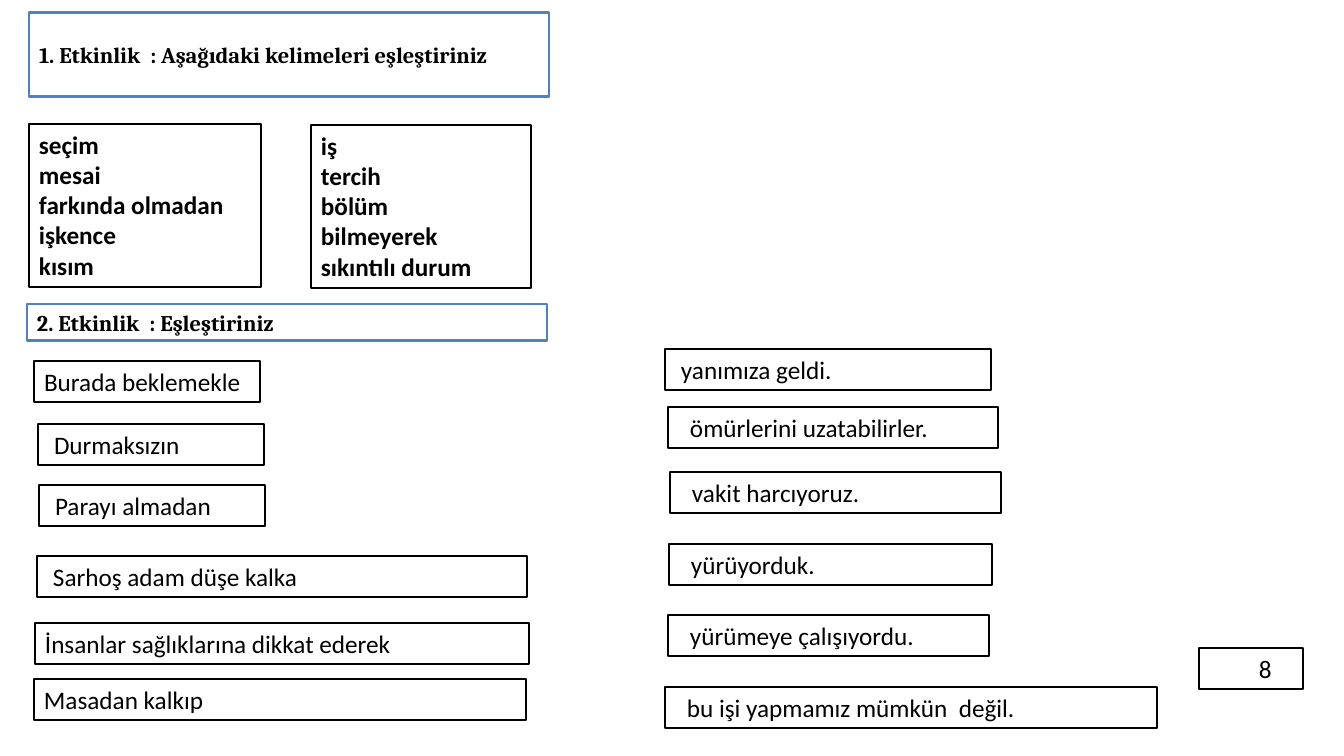
from pptx import Presentation
from pptx.dml.color import RGBColor
from pptx.enum.shapes import MSO_SHAPE
from pptx.enum.text import MSO_ANCHOR, MSO_AUTO_SIZE, PP_ALIGN
from pptx.util import Pt

RECT = MSO_SHAPE.RECTANGLE
TOP, MIDDLE = MSO_ANCHOR.TOP, MSO_ANCHOR.MIDDLE
LEFT = PP_ALIGN.LEFT
GROW = MSO_AUTO_SIZE.SHAPE_TO_FIT_TEXT
PX = 914400 / 100.8
INSET, SPACE, ROW_H = 10, 6, 41
BLACK, WHITE, BLUE = "000000", "FFFFFF", "4F81BD"


def color(value):
    return RGBColor.from_string(value)


def text_box(box, lines, indent=0, bold=False, heading=False, sp=None):
    x, y, w, h = (round(v * PX) for v in box)
    if sp is None:
        sp = s.shapes.add_shape(RECT, x, y, w, h)
        sp.shadow.inherit = False
    sp.left, sp.top, sp.width, sp.height = x, y, w, h
    sp.fill.solid()
    sp.fill.fore_color.rgb = color(WHITE)
    sp.line.color.rgb = color(BLUE if heading else BLACK)
    sp.line.width = Pt(2)
    tf = sp.text_frame
    tf.word_wrap = True
    tf.auto_size = GROW
    tf.vertical_anchor = MIDDLE if heading else TOP
    tf.margin_left = round((INSET + indent) * PX)
    tf.margin_right = round(INSET * PX)
    tf.margin_top = tf.margin_bottom = round(INSET / 2 * PX)
    for i, line in enumerate(lines):
        p = tf.add_paragraph() if i else tf.paragraphs[0]
        p.alignment = LEFT
        r = p.add_run()
        r.text = line
        r.font.name = "Cambria" if heading else "Calibri"
        r.font.size = Pt(16 if heading else 18)
        r.font.bold = bold
        r.font.color.rgb = color(BLACK)


prs = Presentation()
prs.slide_width, prs.slide_height = round(1344 * PX), round(756 * PX)
s = prs.slides.add_slide(prs.slide_layouts[5])

# Activity headings
text_box((29, 36, 520, 37), ["1. Etkinlik  : Aşağıdaki kelimeleri eşleştiriniz"],
         bold=True, heading=True, sp=s.shapes.title)
text_box((27, 304, 520, 37), ["2. Etkinlik  : Eşleştiriniz"], bold=True, heading=True)

# Word lists of the first activity
text_box((29, 124, 232, 163),
         ["seçim", "mesai", "farkında olmadan işkence", "kısım"], bold=True)
text_box((311, 125, 220, 163),
         ["iş", "tercih", "bölüm", "bilmeyerek", "sıkıntılı durum"], bold=True)

# Sentence halves of the second activity: x, y, width, indent in spaces, text
halves = [
    (34, 361, 226, 0, "Burada beklemekle"),
    (38, 424, 226, 1, "Durmaksızın"),
    (39, 485, 226, 1, "Parayı almadan"),
    (37, 556, 490, 1, "Sarhoş adam düşe kalka"),
    (35, 623, 494, 0, "İnsanlar sağlıklarına dikkat ederek"),
    (34, 679, 492, 0, "Masadan kalkıp"),
    (665, 349, 326, 1, "yanımıza geldi."),
    (668, 407, 330, 2, "ömürlerini uzatabilirler."),
    (670, 472, 331, 2, "vakit harcıyoruz."),
    (669, 544, 323, 2, "yürüyorduk."),
    (668, 615, 321, 2, "yürümeye çalışıyordu."),
    (665, 687, 492, 2, "bu işi yapmamız mümkün  değil."),
]
for x, y, w, spaces, half in halves:
    text_box((x, y, w, ROW_H), [half], indent=spaces * SPACE)

# Page number
text_box((1199, 648, 104, ROW_H), ["8"], indent=50)

prs.save("out.pptx")
